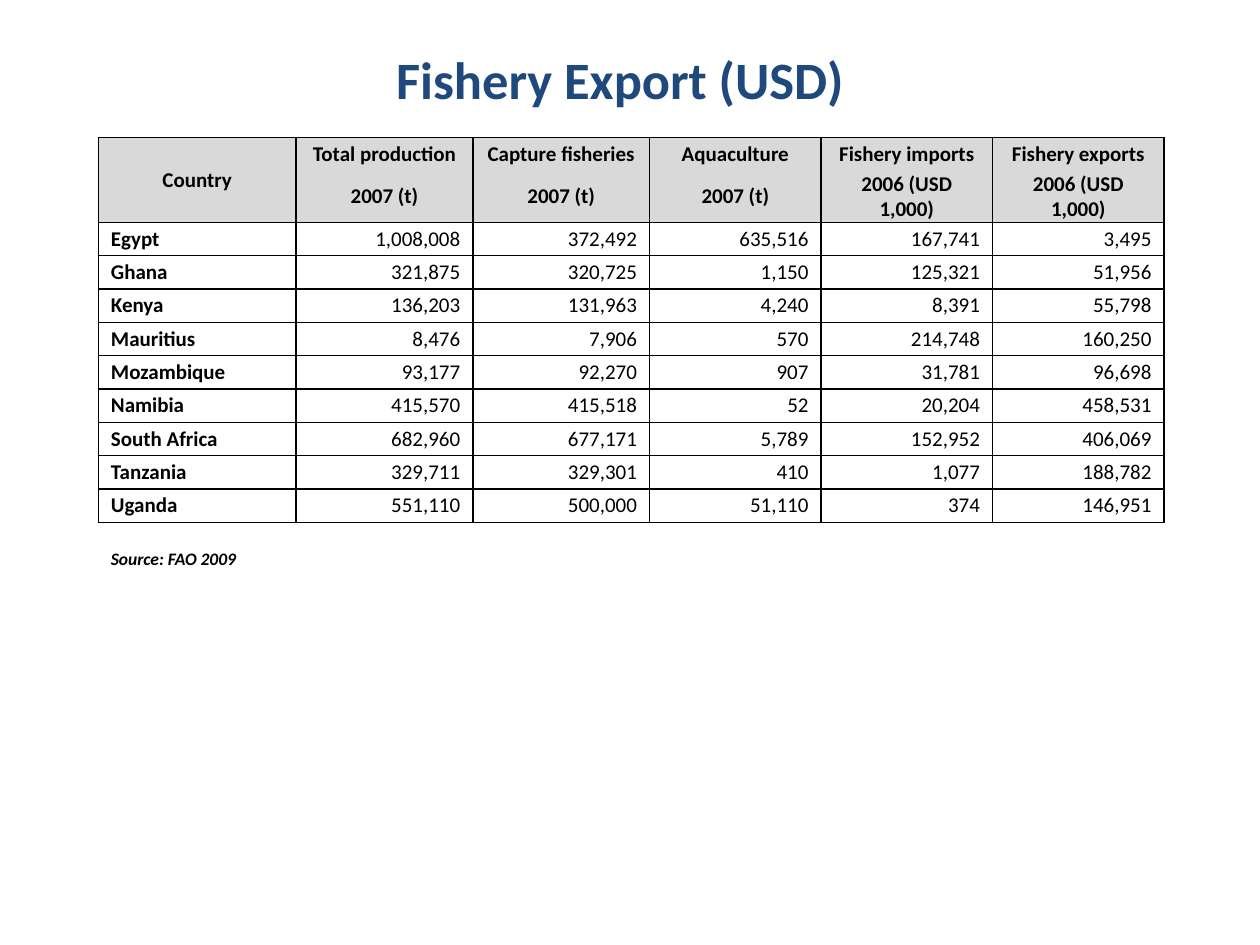
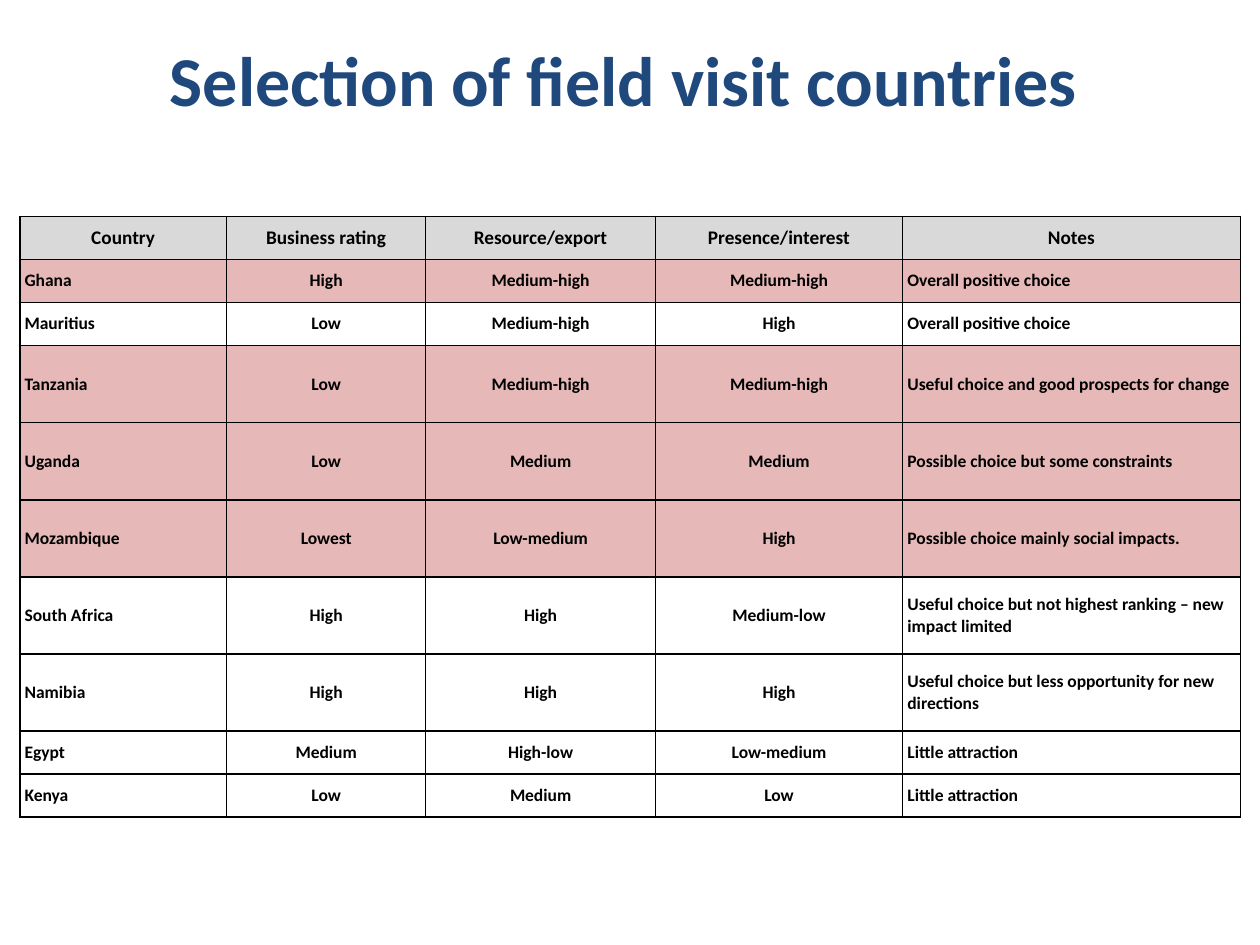
from dataclasses import dataclass

from lxml.etree import SubElement
from pptx import Presentation
from pptx.dml.color import RGBColor
from pptx.enum.text import MSO_ANCHOR, MSO_AUTO_SIZE, PP_ALIGN
from pptx.oxml.ns import qn
from pptx.slide import Slide
from pptx.table import _Cell as Cell
from pptx.text.text import _Paragraph as Paragraph
from pptx.util import Pt

LEFT, CENTER, RIGHT = PP_ALIGN.LEFT, PP_ALIGN.CENTER, PP_ALIGN.RIGHT


@dataclass(frozen=True)
class Theme:
    font: str = "Calibri"
    title: str = "1F497D"
    ink: str = "000000"
    header: str = "D9D9D9"
    selected: str = "E6B9B8"
    plain: str = "FFFFFF"
    border: float = 1
    export_title_size: float = 30
    selection_title_size: float = 40
    export_size: float = 12
    selection_header_size: float = 11
    selection_size: float = 10
    source_size: float = 10


THEME = Theme()


@dataclass(frozen=True)
class TextBlock:
    text: str
    left: float
    top: float
    width: float
    height: float
    size: float
    color: str = THEME.ink
    align: PP_ALIGN = LEFT
    italic: bool = False


@dataclass(frozen=True)
class CountryTable:
    """Header rows above one row per country; the first column is always bold."""
    left: float
    top: float
    widths: tuple[float, ...]
    heights: tuple[float, ...]
    header: tuple[tuple[str, ...], ...]
    body: tuple[tuple[str, ...], ...]
    aligns: tuple[PP_ALIGN, ...]
    header_size: float
    body_size: float
    inset_x: float
    inset_y: float
    bold_body: bool
    body_fill: str | None = None
    selected: tuple[str, ...] = ()


def style(paragraph: Paragraph, size: float, align: PP_ALIGN, color: str = THEME.ink,
          bold: bool = True, italic: bool = False) -> None:
    paragraph.alignment = align
    font = paragraph.font
    font.name, font.size, font.bold, font.italic = THEME.font, Pt(size), bold, italic
    font.color.rgb = RGBColor.from_string(color)


def add_text(slide: Slide, block: TextBlock) -> None:
    box = slide.shapes.add_textbox(Pt(block.left), Pt(block.top), Pt(block.width), Pt(block.height))
    frame = box.text_frame
    frame.word_wrap = True
    frame.auto_size = MSO_AUTO_SIZE.NONE
    frame.vertical_anchor = MSO_ANCHOR.MIDDLE
    frame.text = block.text
    style(frame.paragraphs[0], block.size, block.align, block.color, italic=block.italic)


def set_borders(cell: Cell, hidden: str) -> None:
    """Rule all four sides, except those whose letters are in hidden."""
    properties = cell._tc.get_or_add_tcPr()
    for side in "LRTB":
        line = SubElement(properties, qn(f"a:ln{side}"), w=str(Pt(THEME.border)))
        if side in hidden:
            SubElement(line, qn("a:noFill"))
        else:
            SubElement(SubElement(line, qn("a:solidFill")), qn("a:srgbClr"), val=THEME.ink)


def set_fill(cell: Cell, color: str | None) -> None:
    if color is None:
        cell.fill.background()
    else:
        cell.fill.solid()
        cell.fill.fore_color.rgb = RGBColor.from_string(color)


def add_country_table(slide: Slide, spec: CountryTable) -> None:
    rows = spec.header + spec.body
    header_count = len(spec.header)
    table = slide.shapes.add_table(len(rows), len(spec.widths), Pt(spec.left), Pt(spec.top),
                                   Pt(sum(spec.widths)), Pt(sum(spec.heights))).table
    table.first_row = table.horz_banding = False
    for column, width in zip(table.columns, spec.widths):
        column.width = Pt(width)
    for row, height in zip(table.rows, spec.heights):
        row.height = Pt(height)

    for r, texts in enumerate(rows):
        in_header = r < header_count
        if in_header:
            fill = THEME.header
        else:
            fill = THEME.selected if texts[0] in spec.selected else spec.body_fill
        for c, text in enumerate(texts):
            cell = table.cell(r, c)
            hidden = ""
            if in_header and c > 0:
                hidden = ("T" if r > 0 else "") + ("B" if r < header_count - 1 else "")
            set_borders(cell, hidden)
            set_fill(cell, fill)
            cell.margin_left = cell.margin_right = Pt(spec.inset_x)
            cell.margin_top = cell.margin_bottom = Pt(spec.inset_y)
            cell.vertical_anchor = MSO_ANCHOR.MIDDLE
            cell.text = text
            style(cell.text_frame.paragraphs[0],
                  spec.header_size if in_header else spec.body_size,
                  CENTER if in_header else spec.aligns[c],
                  bold=in_header or c == 0 or spec.bold_body)
    if header_count > 1:
        table.cell(0, 0).merge(table.cell(header_count - 1, 0))


EXPORT_TITLE = TextBlock("Fishery Export (USD) ", 33.8, 0, 648, 90,
                         THEME.export_title_size, THEME.title, CENTER)
EXPORT_SOURCE = TextBlock("Source: FAO 2009", 56.2, 309.6, 185.8, 19.4,
                          THEME.source_size, italic=True)
EXPORT_TABLE = CountryTable(
    left=56.2, top=78.7,
    widths=(113, 101, 101, 98, 98, 98),
    heights=(19.05, 28.6) + (19.05,) * 9,
    header=(
        ("Country", "Total production", "Capture fisheries", "Aquaculture",
         "Fishery imports", "Fishery exports"),
        ("", "2007 (t)", "2007 (t)", "2007 (t)", "2006 (USD 1,000)", "2006 (USD 1,000)"),
    ),
    body=(
        ("Egypt", "1,008,008", "372,492", "635,516", "167,741", "3,495"),
        ("Ghana", "321,875", "320,725", "1,150", "125,321", "51,956"),
        ("Kenya", "136,203", "131,963", "4,240", "8,391", "55,798"),
        ("Mauritius", "8,476", "7,906", "570", "214,748", "160,250"),
        ("Mozambique", "93,177", "92,270", "907", "31,781", "96,698"),
        ("Namibia", "415,570", "415,518", "52", "20,204", "458,531"),
        ("South Africa", "682,960", "677,171", "5,789", "152,952", "406,069"),
        ("Tanzania", "329,711", "329,301", "410", "1,077", "188,782"),
        ("Uganda", "551,110", "500,000", "51,110", "374", "146,951"),
    ),
    aligns=(LEFT,) + (RIGHT,) * 5,
    header_size=THEME.export_size, body_size=THEME.export_size,
    inset_x=7.2, inset_y=0, bold_body=False,
)

SELECTION_TITLE = TextBlock("Selection of field visit countries", 32.4, 22.3, 648, 44.6,
                            THEME.selection_title_size, THEME.title, CENTER)
SHORT_ROW, TALL_ROW = 24.6, 44.1
SELECTION_TABLE = CountryTable(
    left=11.3, top=123.7,
    widths=(118.2, 113.8, 131.3, 141.2, 193),
    heights=(SHORT_ROW,) * 3 + (TALL_ROW,) * 5 + (SHORT_ROW,) * 2,
    header=(("Country", "Business rating", "Resource/export", "Presence/interest", "Notes"),),
    body=(
        ("Ghana", "High", "Medium-high", "Medium-high", "Overall positive choice"),
        ("Mauritius", "Low", "Medium-high", "High", "Overall positive choice"),
        ("Tanzania", "Low", "Medium-high", "Medium-high",
         "Useful choice and good prospects for change"),
        ("Uganda", "Low", "Medium", "Medium", "Possible choice but some constraints"),
        ("Mozambique", "Lowest", "Low-medium", "High", "Possible choice mainly social impacts."),
        ("South Africa", "High", "High", "Medium-low",
         "Useful choice but not highest ranking – new impact limited"),
        ("Namibia", "High", "High", "High",
         "Useful choice but less opportunity for new directions"),
        ("Egypt", "Medium", "High-low", "Low-medium", "Little attraction"),
        ("Kenya", "Low", "Medium", "Low", "Little attraction"),
    ),
    aligns=(LEFT, CENTER, CENTER, CENTER, LEFT),
    header_size=THEME.selection_header_size, body_size=THEME.selection_size,
    inset_x=2.8, inset_y=1.4, bold_body=True, body_fill=THEME.plain,
    selected=("Ghana", "Tanzania", "Uganda", "Mozambique"),
)


def main() -> None:
    deck = Presentation()
    deck.slide_width, deck.slide_height = Pt(720), Pt(540)
    blank = deck.slide_layouts[6]

    export = deck.slides.add_slide(blank)
    add_text(export, EXPORT_TITLE)
    add_text(export, EXPORT_SOURCE)
    add_country_table(export, EXPORT_TABLE)

    selection = deck.slides.add_slide(blank)
    add_text(selection, SELECTION_TITLE)
    add_country_table(selection, SELECTION_TABLE)

    deck.save("out.pptx")


if __name__ == "__main__":
    main()
